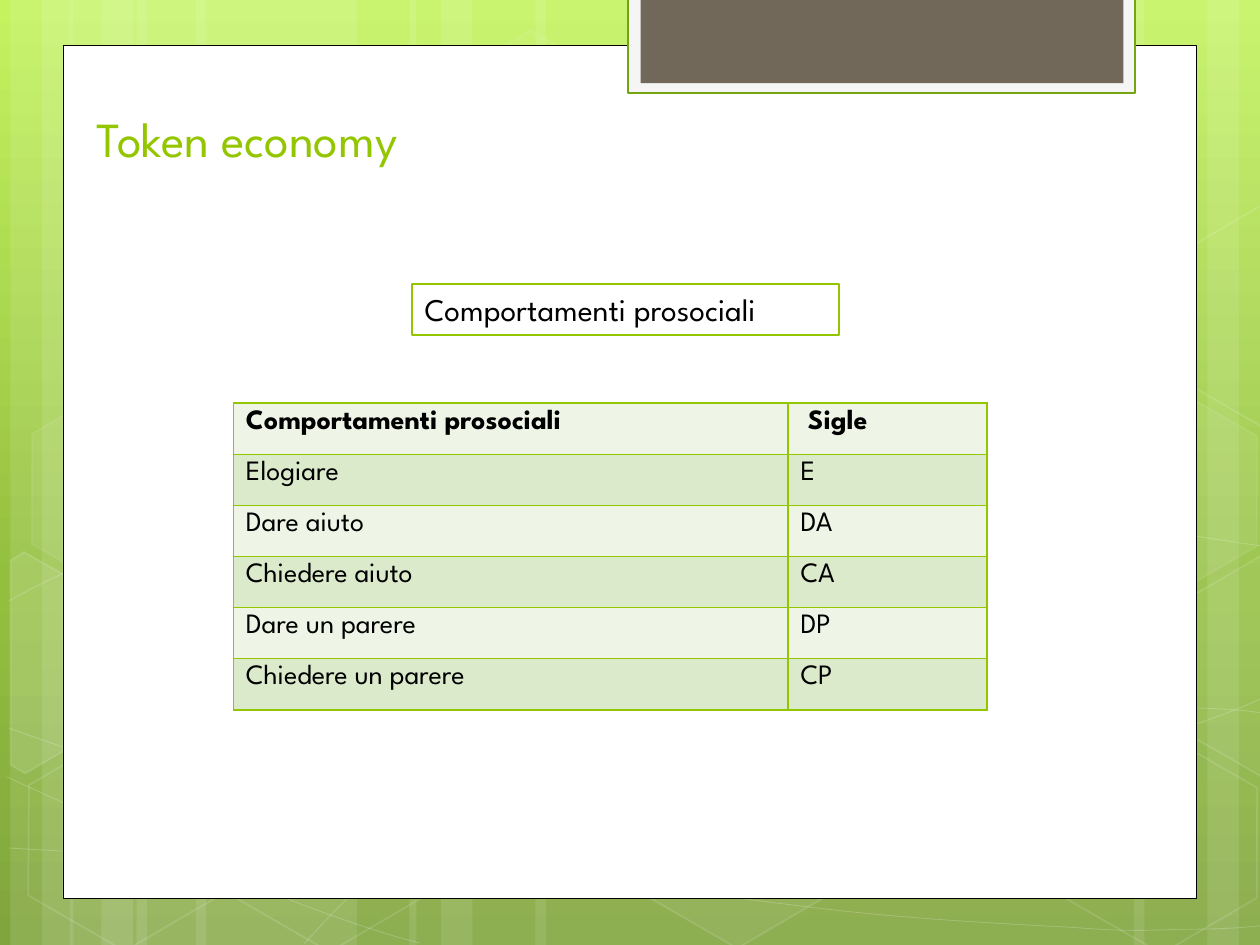
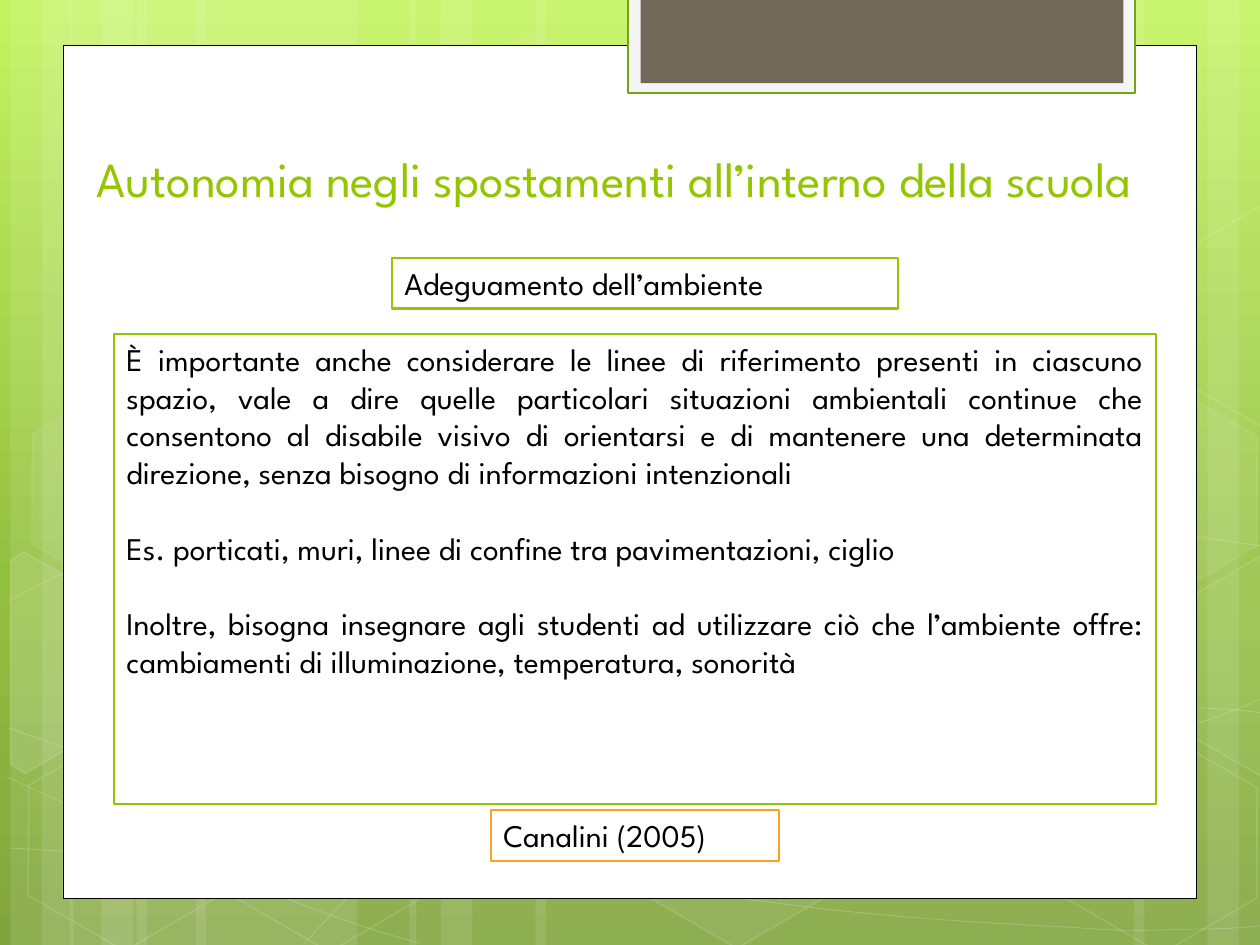
import copy

from lxml import etree
from pptx import Presentation
from pptx.dml.color import RGBColor
from pptx.enum import shapes, text
from pptx.oxml.ns import qn
from pptx.util import Pt

FONT = "League Spartan"
WHITE = RGBColor(0xFF, 0xFF, 0xFF)
BLACK = RGBColor(0, 0, 0)
LIME = RGBColor(0x94, 0xC6, 0x00)
ORANGE = RGBColor(0xFE, 0xA0, 0x22)
TAB_EDGE = RGBColor(0x74, 0xA5, 0x10)
TAB_RIM = RGBColor(0xF5, 0xF5, 0xF5)
TAB_BROWN = RGBColor(0x71, 0x68, 0x5A)
ROW_FILLS = RGBColor(0xEE, 0xF5, 0xE7), RGBColor(0xDC, 0xEA, 0xCC)
GRADIENT = [(0, RGBColor(0xC3, 0xF3, 0x5F)), (0.62, RGBColor(0x93, 0xBF, 0x3F)),
            (1, RGBColor(0x81, 0xA5, 0x3E))]
LEFT, JUSTIFY = text.PP_ALIGN.LEFT, text.PP_ALIGN.JUSTIFY

# Content: boxes are left, top, width, height in points
SLIDES = [
    {"title": ("Token economy", (48.2, 43.2, 553, 56)),
     "boxes": [(["Comportamenti prosociali"], (235.5, 162.3, 243.8, 29), LIME, JUSTIFY)],
     "table": [("Comportamenti prosociali", " Sigle"), ("Elogiare", "E"),
               ("Dare aiuto", "DA"), ("Chiedere aiuto", "CA"),
               ("Dare un parere", "DP"), ("Chiedere un parere", "CP")]},
    {"title": ("Autonomia negli spostamenti all’interno della scuola", (48.2, 66.2, 618, 56)),
     "boxes": [
         (["Adeguamento dell’ambiente"], (224, 147.3, 289.2, 29), LIME, LEFT),
         (["È importante anche considerare le linee di riferimento presenti in ciascuno "
           "spazio, vale a dire quelle particolari situazioni ambientali continue che "
           "consentono al disabile visivo di orientarsi e di mantenere una determinata "
           "direzione, senza bisogno di informazioni intenzionali",
           "Es. porticati, muri, linee di confine tra pavimentazioni, ciglio",
           "Inoltre, bisogna insegnare agli studenti ad utilizzare ciò che l’ambiente "
           "offre: cambiamenti di illuminazione, temperatura, sonorità"],
          (65.2, 190.7, 595.3, 269), LIME, JUSTIFY),
         (["Canalini (2005)"], (280.5, 463, 164.5, 29), ORANGE, LEFT)]},
]
TABLE_LEFT, TABLE_TOP, ROW_HEIGHT, COLUMN_WIDTHS = 133.3, 230.4, 29.2, (317, 113.8)

# Backdrop: stripes are left and width; curves are Bézier chains
STRIPES = [(78, 126), (6, 36), (24, 60), (112, 126), (40, 36), (58, 60),
           (528, 126), (690, 36), (648, 60), (306, 222), (234, 36), (252, 60)]
CURVES = [
    [(5, 484.6), (44, 487), (83, 489), (137, 488), (191, 487), (258, 486), (330, 479),
     (402, 472), (504, 458), (570, 444), (636, 431), (703, 409), (725, 397)],
    [(5, 343.4), (26, 332), (47, 321), (87, 310), (128, 300), (186, 284), (250, 279),
     (314, 274), (392, 273), (471, 279), (550, 284), (682, 307), (725, 312.5)],
    [(4, 444), (91, 484), (178, 523), (240, 539)],
    [(5, 416), (27, 424), (50, 432), (92, 443.5), (134, 454), (197, 472), (257, 484.6),
     (317, 497), (392, 510), (452, 517), (512, 525), (576, 528), (614, 530),
     (652, 533), (662, 531), (680, 531), (699, 531), (712, 530), (725, 528.5)],
    [(174, 539), (187, 525), (200, 510.5), (217, 497.5), (235, 484.6), (259, 470), (279, 460),
     (300, 450), (312, 446), (338, 438.5), (364, 431), (413, 421), (438, 416),
     (464, 411), (467, 411), (490, 410), (512, 407.5), (547, 405), (572, 404.6),
     (597, 404), (638, 404.6), (638, 404.6), (654, 404.6), (670, 404.6), (686, 404.6),
     (699, 405), (711, 406), (718, 407), (724, 407.5), (722, 407), (724, 407.5)],
]
# Left, top, fill opacity, line opacity (percent)
HEXAGONS = [(240.5, 26, 4, 8), (358, 424, 6, 12), (8, 425.5, 0, 12), (10, 224.6, 7, 8),
            (125, 426, 0, 12), (542, 326, 10, 12), (600.5, 427, 0, 12), (600.5, 226, 7, 8)]
CUT_HEXAGONS = [
    ([(6, 320.4), (13.7, 315.4), (69, 347), (68.4, 410.4), (14.4, 442), (6, 437)], 10),
    ([(666.7, 349), (720.7, 317.5), (726.5, 321), (726.5, 441.4), (721.4, 444), (666.7, 412.6)], 4),
    ([(666.7, 149), (720.7, 117.4), (727, 121), (726.5, 241), (721.4, 244), (666.7, 212.4)], 0),
]
PANELS = [((36, 26, 648, 487.2), WHITE, BLACK, 0.5),
          ((359, -1.5, 289.5, 54.7), TAB_RIM, TAB_EDGE, 1.25),
          ((366, -1.5, 276, 49), TAB_BROWN, None, 0)]


def points(values):
    return [Pt(value) for value in values]


def set_opacity(shape, query, percent):
    for color in shape._element.spPr.xpath(query):
        etree.SubElement(color, qn("a:alpha")).set("val", str(percent * 1000))


def paint(shape, fill=None, line=None, width=1.0, fill_opacity=100, line_opacity=100):
    shape.shadow.inherit = False
    if fill is None or fill_opacity == 0:
        shape.fill.background()
    else:
        shape.fill.solid()
        shape.fill.fore_color.rgb = fill
        if fill_opacity < 100:
            set_opacity(shape, "./a:solidFill/a:srgbClr", fill_opacity)
    if line is None:
        shape.line.fill.background()
    else:
        shape.line.color.rgb = line
        shape.line.width = Pt(width)
        if line_opacity < 100:
            set_opacity(shape, "./a:ln/a:solidFill/a:srgbClr", line_opacity)


def style_font(paragraph, size, color, bold=False):
    font = paragraph.font
    font.name, font.size, font.bold = FONT, Pt(size), bold
    font.color.rgb = color


def add_outline(group, vertices, close):
    start, *others = [points(vertex) for vertex in vertices]
    builder = group.shapes.build_freeform(*start)
    builder.add_line_segments(others, close=close)
    return builder.convert_to_shape()


def add_curve(group, chain):
    """Draw the control points, then join each three into one Bézier segment."""
    curve = add_outline(group, chain, False)
    segments = curve._element.xpath(".//a:lnTo")
    for first in range(0, len(segments), 3):
        bezier = etree.Element(qn("a:cubicBezTo"))
        segments[first].addprevious(bezier)
        for segment in segments[first:first + 3]:
            bezier.append(segment[0])
            segment.getparent().remove(segment)
    return curve


def add_gradient(layout):
    fill = layout.background.fill
    fill.gradient()
    fill.gradient_angle = 270
    stop_list = layout._element.xpath(".//a:gsLst")[0]
    stop_list.insert(1, copy.deepcopy(stop_list[0]))
    for stop, (position, color) in zip(fill.gradient_stops, GRADIENT):
        stop.position = position
        stop.color.rgb = color


def add_backdrop(slide):
    """Draw the shared backdrop as one group and hand it to the slide's layout."""
    layout = slide.slide_layout
    add_gradient(layout)
    kinds = shapes.MSO_SHAPE
    group = slide.shapes.add_group_shape()
    for left, width in STRIPES:
        stripe = group.shapes.add_shape(kinds.RECTANGLE, *points((left, 0, width, 540)))
        paint(stripe, WHITE, fill_opacity=10)
    for chain in CURVES:
        paint(add_curve(group, chain), None, WHITE, 0.5, line_opacity=20)
    for left, top, fill_opacity, line_opacity in HEXAGONS:
        hexagon = group.shapes.add_shape(kinds.HEXAGON, *points((left, top, 126, 109.4)))
        hexagon.adjustments[0] = 0.285
        hexagon.rotation = 30
        paint(hexagon, WHITE, WHITE, 1, fill_opacity, line_opacity)
    for vertices, fill_opacity in CUT_HEXAGONS:
        paint(add_outline(group, vertices, True), WHITE, WHITE, 1, fill_opacity, 12)
    for box, fill, line, width in PANELS:
        paint(group.shapes.add_shape(kinds.RECTANGLE, *points(box)), fill, line, width)
    for number, properties in enumerate(group._element.xpath(".//p:cNvPr"), 100):
        properties.set("id", str(number))
    layout.shapes._spTree.insert(2, group._element)


def add_title(slide, wording, box):
    title = slide.shapes.title
    title.left, title.top, title.width, title.height = points(box)
    frame = title.text_frame
    frame.text = wording
    frame.auto_size = text.MSO_AUTO_SIZE.NONE
    frame.vertical_anchor = text.MSO_ANCHOR.BOTTOM
    frame.paragraphs[0].alignment = LEFT
    style_font(frame.paragraphs[0], 28, LIME)


def add_box(slide, wording, box, edge, alignment):
    shape = slide.shapes.add_textbox(*points(box))
    paint(shape, WHITE, edge, 1.25)
    frame = shape.text_frame
    frame.word_wrap = True
    frame.text = "\n".join(wording)
    for index, paragraph in enumerate(frame.paragraphs):
        paragraph.alignment = alignment
        paragraph.space_before = Pt(21.6 if index else 0)
        style_font(paragraph, 18, BLACK)


def add_borders(cell):
    properties = cell._tc.get_or_add_tcPr()
    for index, side in enumerate(("lnL", "lnR", "lnT", "lnB")):
        border = etree.Element(qn("a:" + side), w=str(Pt(1)))
        fill = etree.SubElement(border, qn("a:solidFill"))
        etree.SubElement(fill, qn("a:srgbClr"), val=str(LIME))
        properties.insert(index, border)


def add_behaviour_table(slide, rows):
    table = slide.shapes.add_table(
        len(rows), len(COLUMN_WIDTHS),
        *points((TABLE_LEFT, TABLE_TOP, sum(COLUMN_WIDTHS), ROW_HEIGHT * len(rows)))).table
    for column, width in zip(table.columns, COLUMN_WIDTHS):
        column.width = Pt(width)
    for row_index, row in enumerate(rows):
        table.rows[row_index].height = Pt(ROW_HEIGHT)
        for column_index, wording in enumerate(row):
            cell = table.cell(row_index, column_index)
            cell.text = wording
            cell.fill.solid()
            cell.fill.fore_color.rgb = ROW_FILLS[row_index % 2]
            add_borders(cell)
            style_font(cell.text_frame.paragraphs[0], 16, BLACK, bold=row_index == 0)


def main():
    presentation = Presentation()
    presentation.slide_width, presentation.slide_height = Pt(720), Pt(540)
    layout = presentation.slide_layouts[5]
    for index, content in enumerate(SLIDES):
        slide = presentation.slides.add_slide(layout)
        if index == 0:
            add_backdrop(slide)
        add_title(slide, *content["title"])
        for box in content["boxes"]:
            add_box(slide, *box)
        if "table" in content:
            add_behaviour_table(slide, content["table"])
    presentation.save("out.pptx")


if __name__ == "__main__":
    main()
